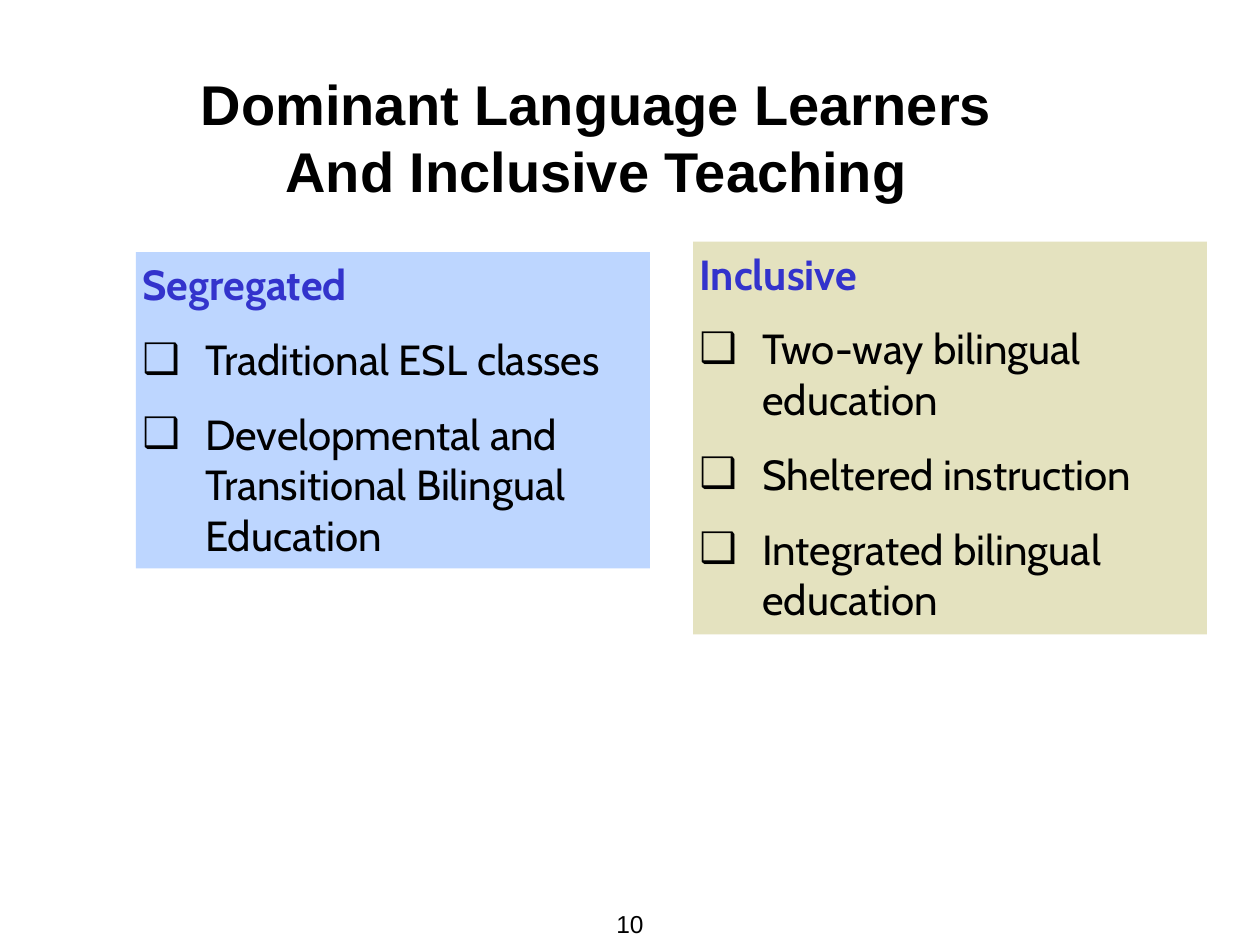
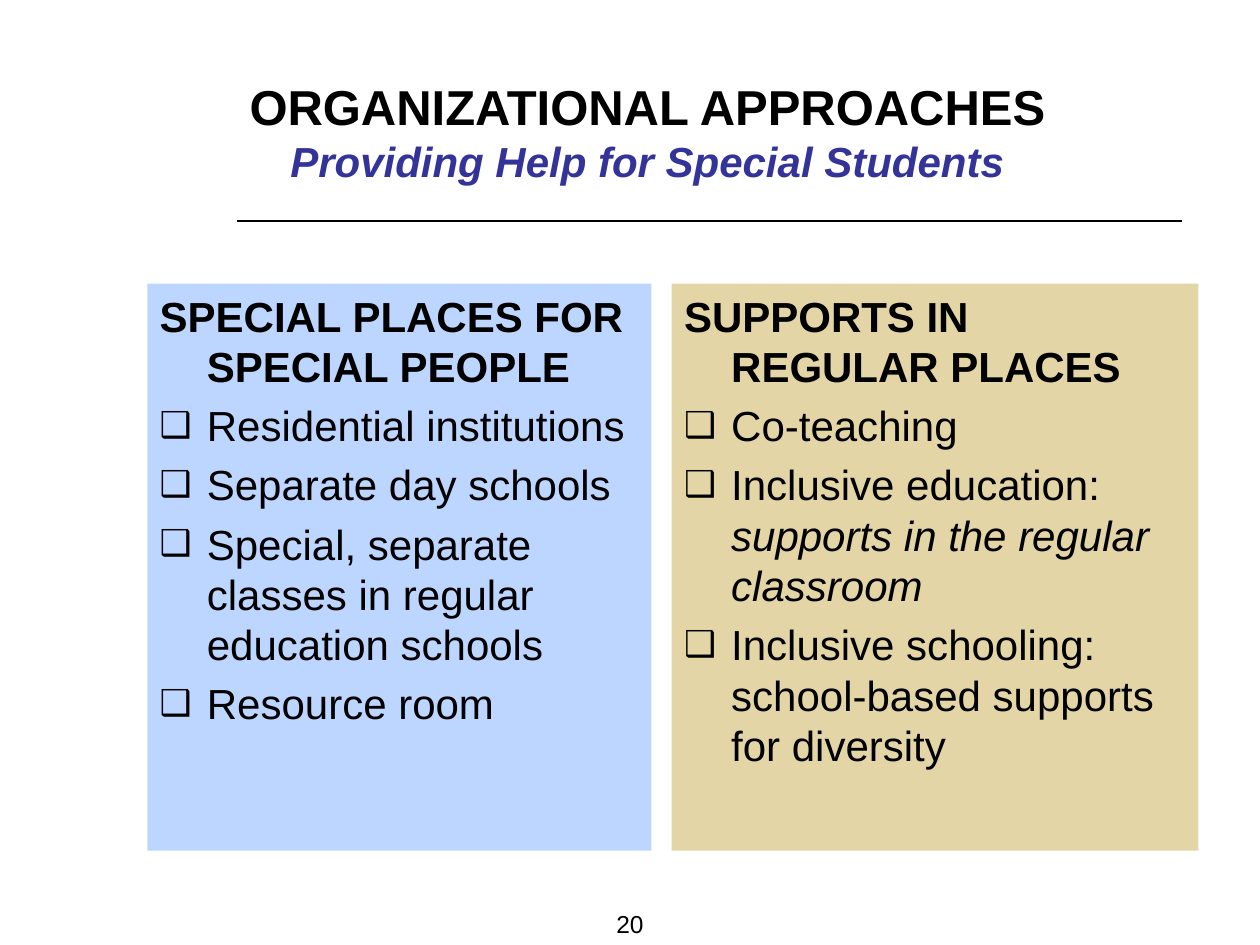
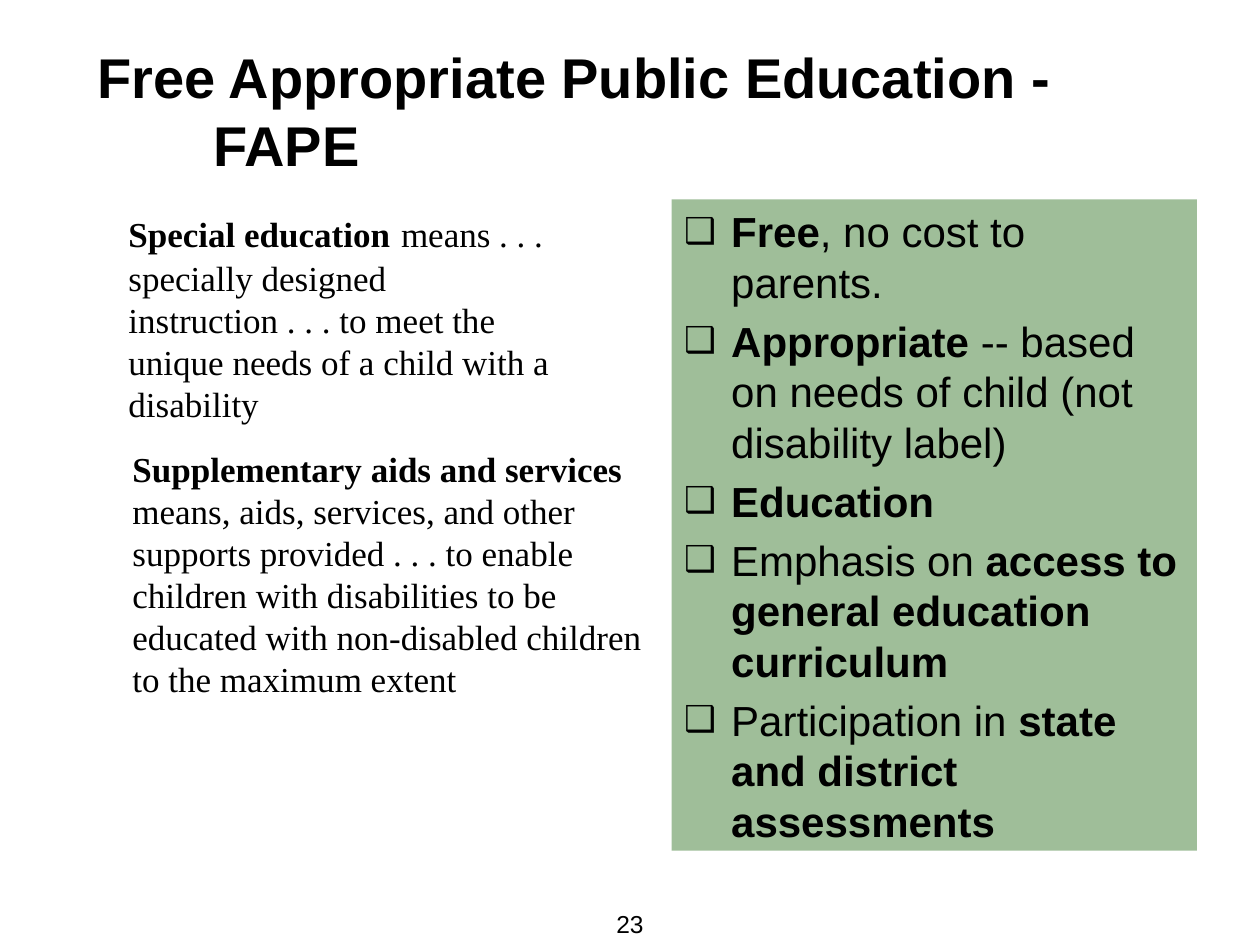
from dataclasses import dataclass

from lxml import etree
from pptx import Presentation
from pptx.dml.color import RGBColor
from pptx.enum.shapes import MSO_CONNECTOR
from pptx.enum.text import MSO_ANCHOR, MSO_AUTO_SIZE, PP_ALIGN
from pptx.oxml.ns import qn
from pptx.util import Cm, Pt

LEFT, CENTER = PP_ALIGN.LEFT, PP_ALIGN.CENTER
TOP, MIDDLE, BOTTOM = MSO_ANCHOR.TOP, MSO_ANCHOR.MIDDLE, MSO_ANCHOR.BOTTOM
NO_AUTOSIZE = MSO_AUTO_SIZE.NONE
STRAIGHT = MSO_CONNECTOR.STRAIGHT

LIST_LAYOUT, TWO_LIST_LAYOUT = 1, 3
BLACK, WHITE = "000000", "FFFFFF"
HEADING_BLUE, SUBTITLE_BLUE = "3333CC", "333399"
PALE_BLUE, PALE_OLIVE, SAND, SAGE = "BDD6FF", "E4E2BF", "E4D5A6", "9FBE99"
SANS, SERIF, HUMANIST = "Arial", "Times New Roman", "Cabin"
BULLET = "❑"
INSET, PANEL_INSET = 0.13, 0.25


@dataclass
class Span:
    text: str
    bold: bool = False
    italic: bool = False
    size: float = 0
    color: str = BLACK


@dataclass
class ListStyle:
    font: str
    indent: float
    space_before: float
    bullet_percent: int
    inset: float


AIRY_LIST = ListStyle(HUMANIST, 1.27, 14, 100, INSET)
COMPACT_LIST = ListStyle(SANS, 0.95, 5, 85, PANEL_INSET)


def rgb(color):
    return RGBColor.from_string(color)


def place(shape, box):
    shape.left, shape.top, shape.width, shape.height = map(Cm, box)


def paint(shape, color):
    shape.fill.solid()
    shape.fill.fore_color.rgb = rgb(color)


def prepare_frame(shape, anchor=TOP, inset=INSET, wrap=True):
    frame = shape.text_frame
    frame.word_wrap = wrap
    frame.auto_size = NO_AUTOSIZE
    frame.vertical_anchor = anchor
    frame.margin_left = frame.margin_right = Cm(inset)
    frame.margin_top = frame.margin_bottom = Cm(INSET)
    return frame


def set_bullet(paragraph, indent, bullet_percent=None):
    """Hang the paragraph, with a bullet only if its size is given."""
    properties = paragraph._p.get_or_add_pPr()
    properties.set("marL", str(Cm(indent)))
    properties.set("indent", str(-Cm(indent)))
    if bullet_percent is None:
        etree.SubElement(properties, qn("a:buNone"))
        return
    etree.SubElement(properties, qn("a:buSzPct"), val=str(bullet_percent * 1000))
    etree.SubElement(properties, qn("a:buChar"), char=BULLET)


def add_spans(paragraph, spans, font, size):
    for span in spans:
        run = paragraph.add_run()
        run.text = span.text
        run.font.name = font
        run.font.size = Pt(span.size or size)
        run.font.bold = span.bold
        run.font.italic = span.italic
        run.font.color.rgb = rgb(span.color)


def add_paragraphs(frame, paragraphs, font, size, align=LEFT, space_before=0):
    """Yield each new paragraph before its text goes in, so bullets come first."""
    for number, spans in enumerate(paragraphs):
        paragraph = frame.add_paragraph() if number else frame.paragraphs[0]
        yield number, paragraph
        paragraph.alignment = align
        paragraph.space_before = Pt(space_before if number else 0)
        add_spans(paragraph, spans, font, size)


def fill_title(slide, box, lines, size=32, align=CENTER, hanging=0):
    title = slide.shapes.title
    place(title, box)
    frame = prepare_frame(title, MIDDLE)
    for _, paragraph in add_paragraphs(frame, lines, SANS, size, align):
        set_bullet(paragraph, hanging)


def fill_panel(slide, index, box, color, items, style, heading=None):
    panel = slide.placeholders[index]
    place(panel, box)
    paint(panel, color)
    frame = prepare_frame(panel, inset=style.inset)
    paragraphs = ([[heading]] if heading else []) + items
    for number, paragraph in add_paragraphs(
            frame, paragraphs, style.font, 24, space_before=style.space_before):
        is_heading = heading and number == 0
        set_bullet(paragraph, style.indent,
                   None if is_heading else style.bullet_percent)


def add_text(slide, box, paragraphs, font, size, align=LEFT, anchor=TOP, wrap=True):
    text_box = slide.shapes.add_textbox(*map(Cm, box))
    frame = prepare_frame(text_box, anchor, wrap=wrap)
    for _ in add_paragraphs(frame, paragraphs, font, size, align):
        pass
    return text_box


def add_rule(slide, left, right, top):
    rule = slide.shapes.add_connector(STRAIGHT, Cm(left), Cm(top), Cm(right), Cm(top))
    rule.line.color.rgb = rgb(BLACK)
    rule.line.width = Pt(1)
    etree.SubElement(rule._element.spPr, qn("a:effectLst"))


def add_slide(deck, layout, number):
    slide = deck.slides.add_slide(deck.slide_layouts[layout])
    add_text(slide, (12.28, 18.19, 0.84, 0.86), [[Span(number)]], SANS, 14,
             CENTER, BOTTOM, wrap=False)
    return slide


def plain_items(*texts):
    return [[Span(text)] for text in texts]


def build_language_learners(deck):
    slide = add_slide(deck, TWO_LIST_LAYOUT, "10")
    fill_title(slide, (3.91, 1.35, 16.23, 2.82),
               [[Span("Dominant Language Learners", bold=True)],
                [Span("And Inclusive Teaching", bold=True)]])
    fill_panel(slide, 1, (2.74, 5.08, 10.36, 6.38), PALE_BLUE,
               plain_items("Traditional ESL classes",
                           "Developmental and Transitional Bilingual Education"),
               AIRY_LIST, Span("Segregated", bold=True, color=HEADING_BLUE))
    fill_panel(slide, 2, (13.97, 4.87, 10.36, 7.92), PALE_OLIVE,
               plain_items("Two-way bilingual education",
                           "Sheltered instruction",
                           "Integrated bilingual education"),
               AIRY_LIST, Span("Inclusive", bold=True, color=HEADING_BLUE))


def build_organizational_approaches(deck):
    slide = add_slide(deck, TWO_LIST_LAYOUT, "20")
    fill_title(slide, (2.46, 1.47, 21.18, 2.34),
               [[Span("ORGANIZATIONAL APPROACHES", bold=True)],
                [Span("Providing Help for Special Students", bold=True,
                      italic=True, size=24, color=SUBTITLE_BLUE)]], size=28)
    add_rule(slide, 4.78, 23.82, 4.45)
    fill_panel(slide, 1, (2.97, 5.72, 10.16, 11.43), PALE_BLUE,
               plain_items("Residential institutions",
                           "Separate day schools",
                           "Special, separate classes in regular education schools",
                           "Resource room"),
               COMPACT_LIST, Span("SPECIAL PLACES FOR SPECIAL PEOPLE", bold=True))
    fill_panel(slide, 2, (13.54, 5.72, 10.62, 11.43), SAND,
               [[Span("Co-teaching")],
                [Span("Inclusive education: "),
                 Span("supports in the regular classroom", italic=True)],
                [Span("Inclusive schooling: school-based supports for diversity")]],
               COMPACT_LIST, Span("SUPPORTS IN REGULAR PLACES", bold=True))


def build_fape(deck):
    slide = add_slide(deck, LIST_LAYOUT, "23")
    fill_title(slide, (1.83, 0.81, 22.17, 2.82),
               [[Span("Free Appropriate Public Education - FAPE", bold=True)]],
               align=LEFT, hanging=2.34)
    fill_panel(slide, 1, (13.54, 4.02, 10.59, 13.13), SAGE,
               [[Span("Free", bold=True), Span(", no cost to parents.")],
                [Span("Appropriate ", bold=True),
                 Span("-- based on needs of child (not disability label)")],
                [Span("Education", bold=True)],
                [Span("Emphasis on "),
                 Span("access to general education curriculum", bold=True)],
                [Span("Participation in "),
                 Span("state and district assessments", bold=True)]],
               COMPACT_LIST)
    add_text(slide, (2.46, 4.02, 9.7, 4.67),
             [[Span("Special education", bold=True), Span(" ", size=24),
               Span("means . . .")],
              [Span("specially designed instruction . . . to meet the unique "
                    "needs of a child with a disability")]], SERIF, 20)
    supplementary_aids = add_text(
        slide, (2.54, 8.89, 10.59, 5.33),
        [[Span("Supplementary aids and services", bold=True)],
         [Span("means, aids, services, and other supports provided . . . to enable "
               "children with disabilities to be educated with non-disabled "
               "children to the maximum extent")]], SERIF, 20)
    paint(supplementary_aids, WHITE)


def main():
    deck = Presentation()
    deck.slide_width, deck.slide_height = Cm(25.4), Cm(19.05)
    build_language_learners(deck)
    build_organizational_approaches(deck)
    build_fape(deck)
    deck.save("out.pptx")


if __name__ == "__main__":
    main()
